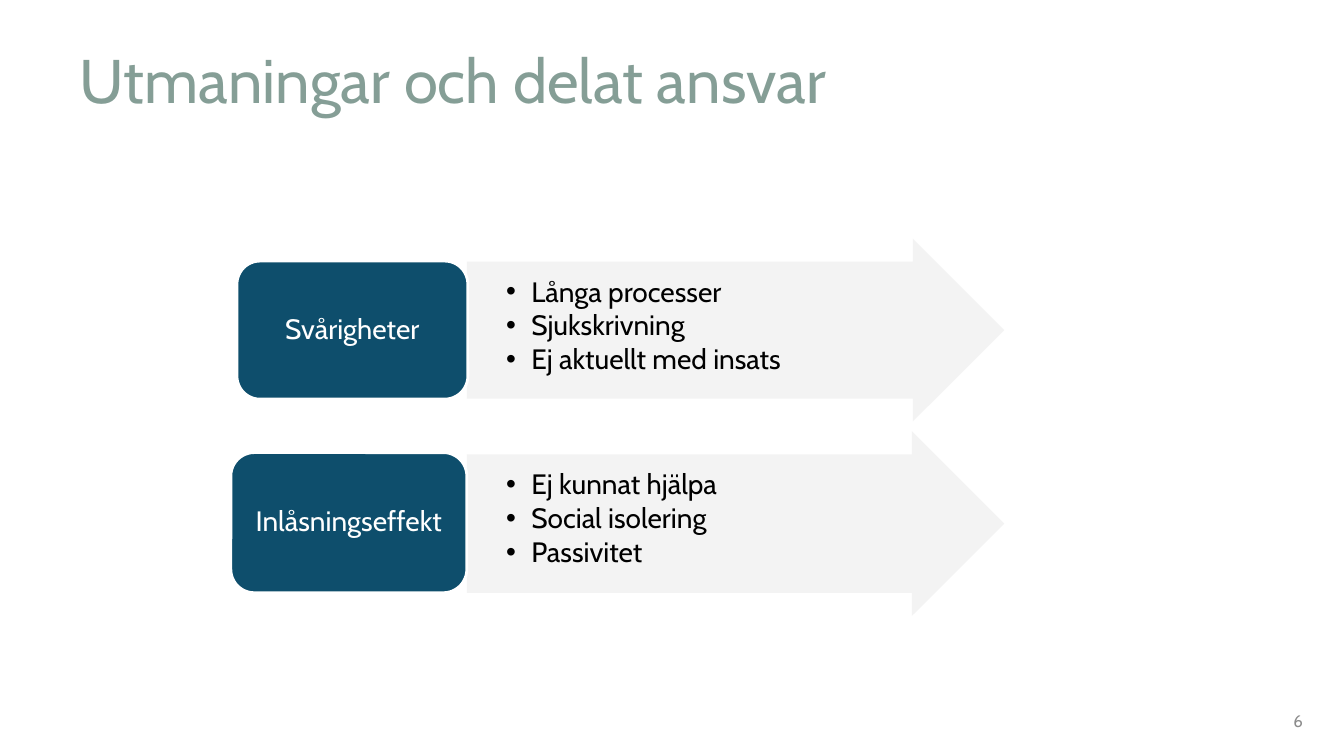
from dataclasses import dataclass

from lxml.etree import SubElement
from pptx import Presentation
from pptx.dml.color import RGBColor as RGB
from pptx.enum.shapes import MSO_SHAPE as SHAPE
from pptx.enum.text import MSO_ANCHOR as ANCHOR, MSO_AUTO_SIZE as AUTOSIZE, PP_ALIGN as ALIGN
from pptx.oxml.ns import qn
from pptx.util import Inches, Pt

TITLE = "Utmaningar och delat ansvar"
PAGE_NUMBER = "6"
# label, label box, arrow top and height, points
ROWS = [
    ("Svårigheter", (2.35, 2.59, 2.29, 1.37), (2.37, 1.81),
     ["Långa processer", "Sjukskrivning", "Ej aktuellt med insats"]),
    ("Inlåsningseffekt", (2.29, 4.49, 2.34, 1.39), (4.28, 1.83),
     ["Ej kunnat hjälpa", "Social isolering", "Passivitet"]),
]
ARROW_LEFT, ARROW_WIDTH = 4.63, 5.33


@dataclass(frozen=True)
class Theme:
    font: str = "Cabin"
    title: RGB = RGB(0x85, 0x9E, 0x96)
    number: RGB = RGB(0x8C, 0x8C, 0x8C)
    label: RGB = RGB(0x0E, 0x4E, 0x6C)
    arrow: RGB = RGB(0xF2, 0xF2, 0xF2)
    white: RGB = RGB(0xFF, 0xFF, 0xFF)
    black: RGB = RGB(0, 0, 0)
    title_size: int = 44
    body_size: int = 20
    number_size: int = 12


THEME = Theme()


def write(sp, lines, size, color, align, anchor, spacing=0.9):
    tf = sp.text_frame
    tf.word_wrap = True
    tf.auto_size = AUTOSIZE.NONE
    tf.vertical_anchor = anchor
    tf.text = "\n".join(lines)
    for p in tf.paragraphs:
        p.alignment = align
        p.line_spacing = spacing
        for r in p.runs:
            r.font.name = THEME.font
            r.font.size = Pt(size)
            r.font.color.rgb = color
    return tf


def set_insets(tf, left, top, right, bottom):
    tf.margin_left, tf.margin_top = Inches(left), Inches(top)
    tf.margin_right, tf.margin_bottom = Inches(right), Inches(bottom)


def add_bullet(p):
    p.space_after = Pt(2.5)
    pPr = p._p.get_or_add_pPr()
    pPr.set("marL", str(Inches(0.25)))
    pPr.set("indent", str(-Inches(0.25)))
    SubElement(pPr, qn("a:buFont"), typeface="Arial")
    SubElement(pPr, qn("a:buChar"), char="•")


def add_filled(slide, kind, box, color):
    sp = slide.shapes.add_shape(kind, *map(Inches, box))
    sp.shadow.inherit = False
    sp.fill.solid()
    sp.fill.fore_color.rgb = color
    return sp


def add_arrow(slide, top, height, points):
    sp = add_filled(slide, SHAPE.RIGHT_ARROW, (ARROW_LEFT, top, ARROW_WIDTH, height), THEME.arrow)
    sp.adjustments[0], sp.adjustments[1] = 0.75, 0.5
    sp.line.fill.background()
    solid = sp._element.spPr.find(qn("a:solidFill"))
    SubElement(solid[0], qn("a:alpha"), val="90000")
    tf = write(sp, points, THEME.body_size, THEME.black, ALIGN.LEFT, ANCHOR.TOP)
    set_insets(tf, 0.39, 0.16, 0.01, 0.05)
    for p in tf.paragraphs:
        add_bullet(p)


def add_label(slide, box, label):
    sp = add_filled(slide, SHAPE.ROUNDED_RECTANGLE, box, THEME.label)
    sp.line.color.rgb = THEME.white
    sp.line.width = Pt(2)
    tf = write(sp, [label], THEME.body_size, THEME.white, ALIGN.CENTER, ANCHOR.MIDDLE)
    set_insets(tf, 0.08, 0.04, 0.08, 0.04)


def main():
    prs = Presentation()
    prs.slide_width, prs.slide_height = Inches(13.33), Inches(7.5)
    slide = prs.slides.add_slide(prs.slide_layouts[5])

    title = slide.shapes.title
    title.left, title.top = Inches(0.69), Inches(0.32)
    title.width, title.height = Inches(10.25), Inches(0.89)
    write(title, [TITLE], THEME.title_size, THEME.title, ALIGN.LEFT, ANCHOR.BOTTOM)

    number = slide.shapes.add_textbox(Inches(10.02), Inches(6.95), Inches(3), Inches(0.4))
    write(number, [PAGE_NUMBER], THEME.number_size, THEME.number, ALIGN.RIGHT, ANCHOR.MIDDLE, 1.0)

    for label, box, (top, height), points in ROWS:
        add_arrow(slide, top, height, points)
        add_label(slide, box, label)

    prs.save("out.pptx")


if __name__ == "__main__":
    main()
